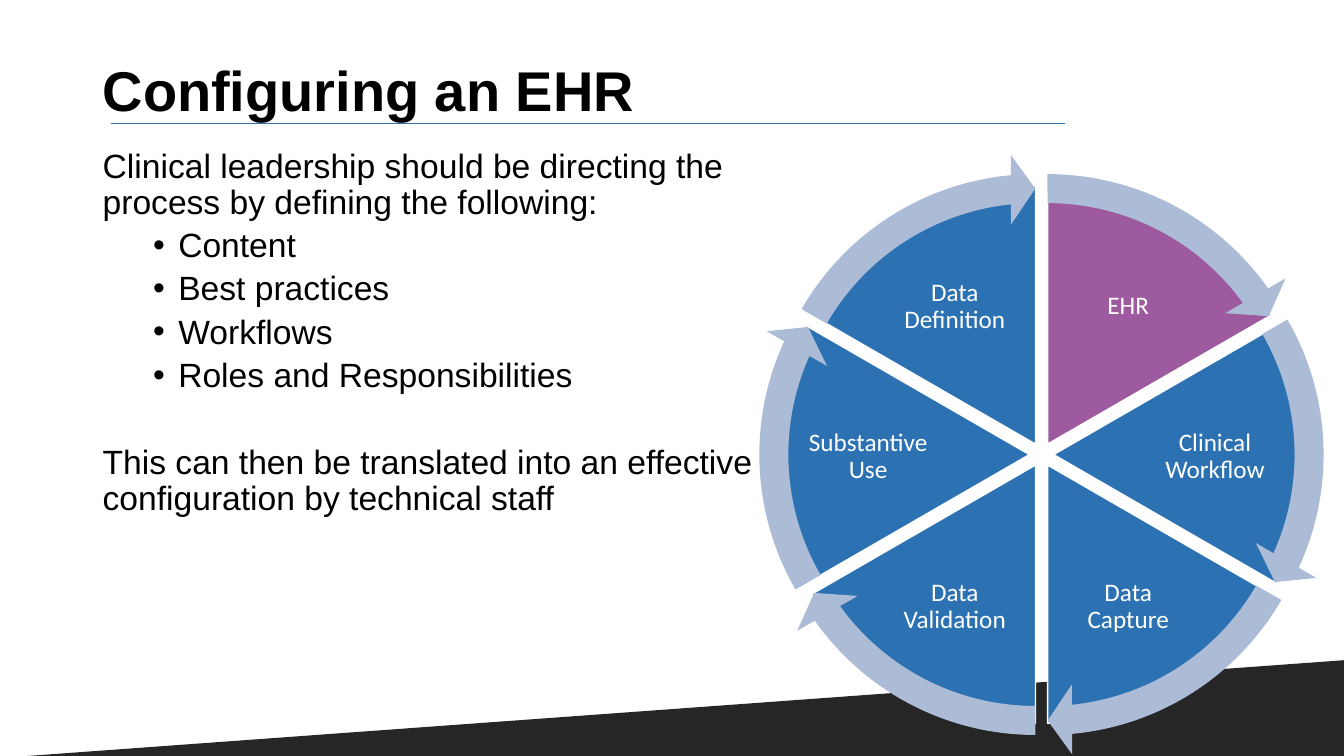
from math import cos, radians, sin, tan

from lxml import etree
from pptx import Presentation
from pptx.dml.color import RGBColor
from pptx.enum.shapes import MSO_CONNECTOR, MSO_SHAPE
from pptx.enum.text import MSO_ANCHOR, PP_ALIGN
from pptx.oxml import parse_xml
from pptx.oxml.ns import nsdecls, qn
from pptx.util import Inches, Pt


def rgb(value):
    return RGBColor.from_string(value)


def write(para, text, font, size, color, bold=False):
    """Add text to a paragraph, one run per line."""
    para.line_spacing = 0.9
    for number, line in enumerate(text.split("\n")):
        if number:
            para.add_line_break()
        span = para.add_run()
        span.text = line
        span.font.name = font
        span.font.size = Pt(size)
        span.font.bold = bold
        span.font.color.rgb = rgb(color)


deck = Presentation()
deck.slide_width, deck.slide_height = Inches(13.33), Inches(7.5)
page = deck.slides.add_slide(deck.slide_layouts[6])
shapes = page.shapes

# Footer slope and title rule
slope = shapes.add_shape(MSO_SHAPE.RIGHT_TRIANGLE, 0, Inches(6.55), Inches(13.33), Inches(0.97))
slope.shadow.inherit = False
slope.fill.solid()
slope.fill.fore_color.rgb = rgb("262626")
slope.line.fill.background()
slope._element.spPr.find(qn("a:xfrm")).set("flipH", "1")

rule = shapes.add_connector(MSO_CONNECTOR.STRAIGHT, Inches(1.1), Inches(1.22), Inches(10.56), Inches(1.22))
rule.line.color.rgb = rgb("2C72B3")
rule.line.width = Pt(0.5)
rule._element.spPr.append(parse_xml(
    f'<a:effectLst {nsdecls("a")}><a:outerShdw blurRad="50800" dist="38100" dir="2700000">'
    '<a:srgbClr val="000000"><a:alpha val="40000"/></a:srgbClr></a:outerShdw></a:effectLst>'))

# Title
title = shapes.add_textbox(Inches(0.92), Inches(0.52), Inches(11.5), Inches(0.81)).text_frame
title.word_wrap = True
title.vertical_anchor = MSO_ANCHOR.MIDDLE
write(title.paragraphs[0], "Configuring an EHR", "Arial", 40, "000000", bold=True)

# Wheel: wedges and arrows are pushed outward from the hub
HUB_X, HUB_Y = 10.33, 4.51
GAP, RADIUS, LABEL_RADIUS = 0.12, 2.56, 1.72
LABEL_WIDTH, LABEL_HEIGHT, LABEL_DROP = 1.28, 0.96, 0.02
ARROW_SIZE = 5.76
STEP = 60
BEND = 4 / 3 * tan(radians(STEP / 4))  # Bezier handle length for one wedge, in radii
STAGES = ["EHR", "Clinical Workflow", "Data Capture", "Data Validation", "Substantive Use", "Data Definition"]

wheel = shapes.add_group_shape().shapes
centers = []
for index, stage in enumerate(STAGES):
    start, end = radians(-90 + STEP * index), radians(-90 + STEP * (index + 1))
    middle = (start + end) / 2
    x, y = HUB_X + GAP * cos(middle), HUB_Y + GAP * sin(middle)
    centers.append((x, y))

    # Points in a square as large as the full circle: start, two handles, end, centre
    units = [
        (cos(start), sin(start)),
        (cos(start) - BEND * sin(start), sin(start) + BEND * cos(start)),
        (cos(end) + BEND * sin(end), sin(end) - BEND * cos(end)),
        (cos(end), sin(end)),
        (0, 0),
    ]
    first, handle_1, handle_2, last, center = [
        f'<a:pt x="{Inches(RADIUS * (1 + u))}" y="{Inches(RADIUS * (1 + v))}"/>' for u, v in units]
    outline = wheel.build_freeform(0, 0)
    outline.add_line_segments([(Inches(RADIUS), 0), (0, Inches(RADIUS))], close=True)
    wedge = outline.convert_to_shape()
    wedge.left, wedge.top = Inches(x - RADIUS), Inches(y - RADIUS)
    wedge.width = wedge.height = Inches(2 * RADIUS)
    paths = wedge._element.spPr.find(qn("a:custGeom")).find(qn("a:pathLst"))
    paths[0] = parse_xml(
        f'<a:path {nsdecls("a")} w="{wedge.width}" h="{wedge.height}"><a:moveTo>{first}</a:moveTo>'
        f'<a:cubicBezTo>{handle_1}{handle_2}{last}</a:cubicBezTo><a:lnTo>{center}</a:lnTo><a:close/></a:path>')
    wedge.shadow.inherit = False
    wedge.fill.solid()
    wedge.fill.fore_color.rgb = rgb("2C72B3" if index else "9D5A9E")
    wedge.line.color.rgb = rgb("FFFFFF")
    wedge.line.width = Pt(1)

    label_left = Inches(HUB_X + LABEL_RADIUS * cos(middle) - LABEL_WIDTH / 2)
    label_top = Inches(HUB_Y + LABEL_DROP + LABEL_RADIUS * sin(middle) - LABEL_HEIGHT / 2)
    label = wedge.text_frame
    label.word_wrap = True
    label.vertical_anchor = MSO_ANCHOR.MIDDLE
    label.margin_left = label_left - wedge.left
    label.margin_right = wedge.left + wedge.width - label_left - Inches(LABEL_WIDTH)
    label.margin_top = label_top - wedge.top
    label.margin_bottom = wedge.top + wedge.height - label_top - Inches(LABEL_HEIGHT)
    label.paragraphs[0].alignment = PP_ALIGN.CENTER
    write(label.paragraphs[0], stage, "Calibri", 18, "FFFFFF")

ANGLE_UNIT = 0.6  # adjustment value of one degree
for index, (x, y) in enumerate(centers):
    arrow = wheel.add_shape(MSO_SHAPE.CIRCULAR_ARROW, Inches(x - ARROW_SIZE / 2), Inches(y - ARROW_SIZE / 2),
                            Inches(ARROW_SIZE), Inches(ARROW_SIZE))
    arrow.shadow.inherit = False
    arrow.fill.solid()
    arrow.fill.fore_color.rgb = rgb("ADBCD6")
    arrow.line.fill.background()
    tail = (270 + STEP * index) % 360
    tip = (tail + 54.5) % 360
    for position, value in enumerate([0.05, 5.46 * ANGLE_UNIT, tip * ANGLE_UNIT, tail * ANGLE_UNIT, 0.06]):
        arrow.adjustments[position] = value

# Body: text, bulleted, points of space before
BODY = [
    ("Clinical leadership should be directing the\nprocess by defining the following:", False, 0),
    ("Content", True, 5),
    ("Best practices", True, 5),
    ("Workflows", True, 5),
    ("Roles and Responsibilities", True, 5),
    ("This can then be translated into an effective\nconfiguration by technical staff", False, 36),
]
body = shapes.add_textbox(Inches(0.92), Inches(1.43), Inches(11.5), Inches(5.22)).text_frame
body.word_wrap = True
for index, (text, bulleted, space) in enumerate(BODY):
    para = body.add_paragraph() if index else body.paragraphs[0]
    if bulleted:
        props = para._p.get_or_add_pPr()
        props.set("marL", str(Inches(0.75)))
        props.set("indent", str(-Inches(0.25)))
        etree.SubElement(props, qn("a:buFont")).set("typeface", "Arial")
        etree.SubElement(props, qn("a:buChar")).set("char", "•")
    para.space_before = Pt(space)
    write(para, text, "Arial", 24, "000000")

deck.save("out.pptx")
